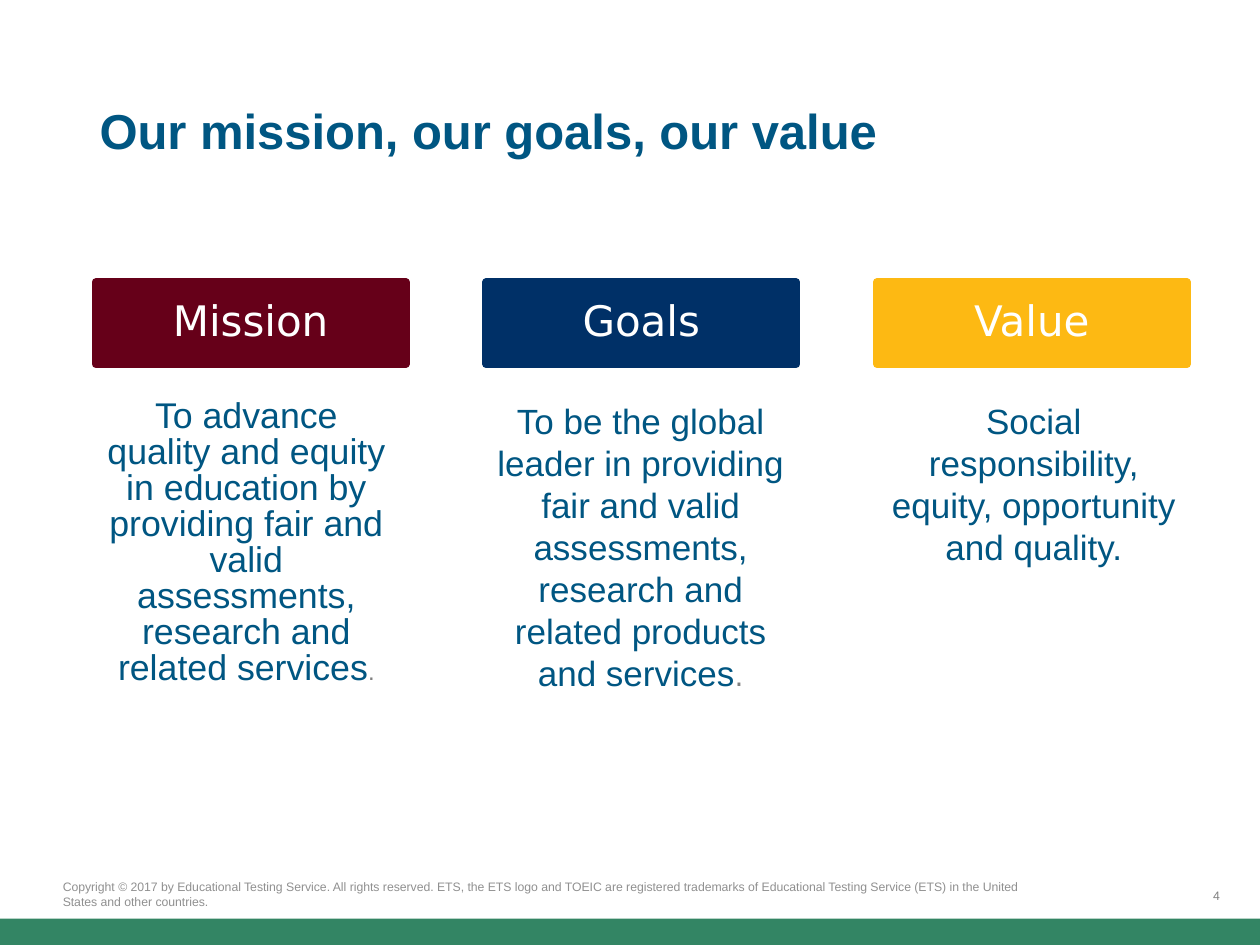
"""Build the mission, goals and value slide."""
import pptx
import pptx.util
import pptx.dml.color
import pptx.enum.shapes
import pptx.enum.text
from lxml import etree

Inches = pptx.util.Inches
Pt = pptx.util.Pt
Align = pptx.enum.text.PP_ALIGN
Anchor = pptx.enum.text.MSO_ANCHOR
RECTANGLE = pptx.enum.shapes.MSO_SHAPE.RECTANGLE


def color(value):
    return pptx.dml.color.RGBColor.from_string(value)


def write(shape, text, size=20, font="Arial", hex_color="005682", bold=False,
          align=Align.LEFT, anchor=Anchor.TOP, spacing=1.0):
    frame = shape.text_frame
    frame.word_wrap = True
    frame.auto_size = pptx.enum.text.MSO_AUTO_SIZE.NONE
    frame.vertical_anchor = anchor
    paragraph = frame.paragraphs[0]
    paragraph.alignment = align
    paragraph.line_spacing = spacing
    run = paragraph.add_run()
    run.text = text
    run.font.size = Pt(size)
    run.font.name = font
    run.font.bold = bold
    run.font.color.rgb = color(hex_color)


presentation = pptx.Presentation()
presentation.slide_width = Inches(10)
presentation.slide_height = Inches(7.5)
slide = presentation.slides.add_slide(presentation.slide_layouts[5])
shapes = slide.shapes

title = shapes.title
title.left, title.top = Inches(0.69), Inches(0.2)
title.width, title.height = Inches(9.31), Inches(1.12)
write(title, "Our mission, our goals, our value", size=28, bold=True,
      anchor=Anchor.BOTTOM, spacing=0.9)

page_number = shapes.add_textbox(Inches(9.53), Inches(7), Inches(0.47), Inches(0.29))
write(page_number, "4", size=7, hex_color="808080", align=Align.JUSTIFY)

footer_band = shapes.add_shape(RECTANGLE, Inches(-0.04), Inches(7.29), Inches(10.04), Inches(0.22))
footer_band.shadow.inherit = False
footer_band.fill.solid()
footer_band.fill.fore_color.rgb = color("00673E")
footer_band.line.fill.background()
namespace = "{http://schemas.openxmlformats.org/drawingml/2006/main}"
band_color = footer_band._element.spPr.find(f"{namespace}solidFill/{namespace}srgbClr")
etree.SubElement(band_color, f"{namespace}alpha", val="80000")

headings = [("Mission", "660019"), ("Goals", "003067"), ("Value", "FDB913")]
for index, (heading, fill) in enumerate(headings):
    box = shapes.add_shape(RECTANGLE, Inches(0.76 + 3.1 * index), Inches(2.24), Inches(2.46), Inches(0.65))
    box.shadow.inherit = False
    box.fill.solid()
    box.fill.fore_color.rgb = color(fill)
    box.line.color.rgb = color(fill)
    box.line.width = Pt(4.5)
    write(box, heading, size=24, font="DejaVu Sans", hex_color="FFFFFF",
          align=Align.CENTER, anchor=Anchor.MIDDLE, spacing=0.9)

descriptions = [
    (0.69, 2.53, 2.43, 20.4, 0.84,
     "To advance quality and equity in education by providing fair and valid "
     "assessments, research and related services", (13.6, "Arial")),
    (3.81, 2.55, 2.05, 20, 1.0,
     "To be the global leader in providing fair and valid assessments, "
     "research and related products and services", (16, "DejaVu Sans")),
    (6.95, 2.51, 2.04, 20, 1.0,
     "Social responsibility, equity, opportunity and quality.", None),
]
for left, width, height, size, spacing, text, period in descriptions:
    description = shapes.add_textbox(Inches(left), Inches(3.12), Inches(width), Inches(height))
    write(description, text, size=size, align=Align.CENTER, spacing=spacing)
    if period:
        period_size, period_font = period
        write(description, ".", size=period_size, font=period_font, hex_color="808080",
              align=Align.CENTER, spacing=spacing)

copyright_line = shapes.add_textbox(Inches(0.4), Inches(6.86), Inches(8), Inches(0.4))
write(copyright_line,
      "Copyright © 2017 by Educational Testing Service. All rights reserved. ETS, the ETS logo "
      "and TOEIC are registered trademarks of Educational Testing Service (ETS) in the United "
      "States and other countries.",
      size=7, hex_color="909090", anchor=Anchor.BOTTOM)

presentation.save("out.pptx")
